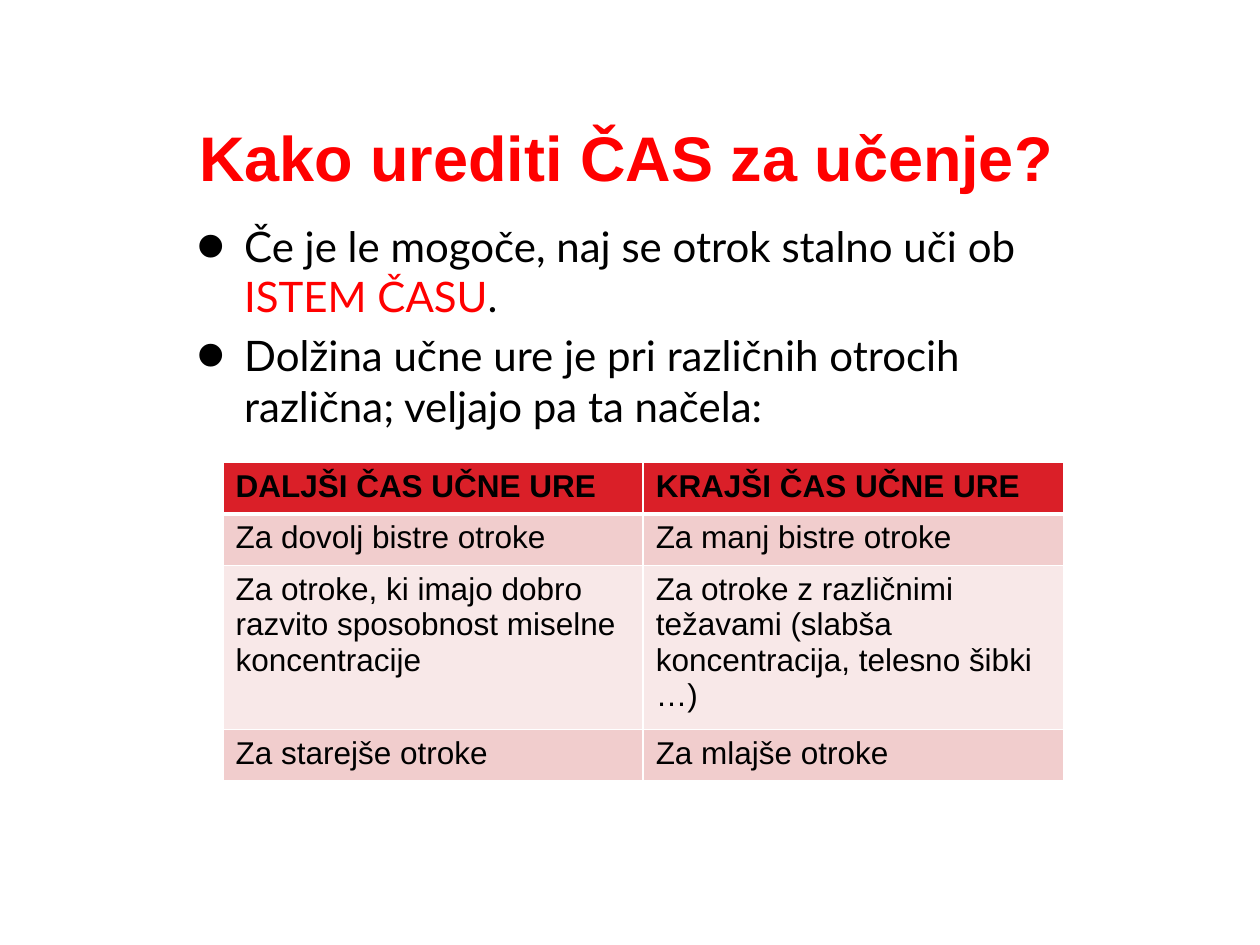
from typing import NamedTuple

from lxml import etree
from pptx import Presentation
from pptx.dml.color import RGBColor
from pptx.enum.text import MSO_ANCHOR, PP_ALIGN
from pptx.oxml.ns import qn
from pptx.util import Inches, Pt

CENTER = PP_ALIGN.CENTER
MIDDLE = MSO_ANCHOR.MIDDLE
TITLE_ONLY = 5

COLORS = {
    "accent": "FF0000",
    "text": "000000",
    "header": "DA1F28",
    "odd_row": "F1CDCD",
    "even_row": "F8E8E8",
    "border": "FFFFFF",
}


class Run(NamedTuple):
    text: str
    color: str = "text"


class Row(NamedTuple):
    longer: str
    shorter: str
    height: float = 0.41


BULLETS = [
    [Run("Če je le mogoče, naj se otrok stalno uči ob "),
     Run("ISTEM ČASU", "accent"), Run(".")],
    [Run("Dolžina učne ure je pri različnih otrocih različna; "
         "veljajo pa ta načela:")],
]

ROWS = [
    Row("DALJŠI ČAS UČNE URE", "KRAJŠI ČAS UČNE URE"),
    Row("Za dovolj bistre otroke", "Za manj bistre otroke"),
    Row("Za otroke, ki imajo dobro razvito sposobnost miselne koncentracije",
        "Za otroke z različnimi težavami (slabša koncentracija, "
        "telesno šibki …)", 1.22),
    Row("Za starejše otroke", "Za mlajše otroke"),
]


def rgb(name: str) -> RGBColor:
    return RGBColor.from_string(COLORS[name])


def add_run(p, run: Run, size: int, font: str, bold: bool = False) -> None:
    r = p.add_run()
    r.text = run.text
    r.font.size = Pt(size)
    r.font.name = font
    r.font.bold = bold
    r.font.color.rgb = rgb(run.color)


def set_bullet(p) -> None:
    """Give the paragraph a hanging bullet at twice the text size."""
    pPr = p._p.get_or_add_pPr()
    pPr.set("marL", str(Inches(0.38)))
    pPr.set("indent", str(-Inches(0.38)))
    etree.SubElement(pPr, qn("a:buSzPct"), val="200000")
    etree.SubElement(pPr, qn("a:buFont"), typeface="Arial")
    etree.SubElement(pPr, qn("a:buChar"), char="•")


def set_borders(cell, top: int, bottom: int) -> None:
    tcPr = cell._tc.get_or_add_tcPr()
    for side, width in (("L", 1), ("R", 1), ("T", top), ("B", bottom)):
        ln = etree.SubElement(tcPr, qn(f"a:ln{side}"), w=str(Pt(width)))
        fill = etree.SubElement(ln, qn("a:solidFill"))
        etree.SubElement(fill, qn("a:srgbClr"), val=COLORS["border"])


def add_title(slide, text: str) -> None:
    sp = slide.shapes.title
    sp.left, sp.top = Inches(0.43), Inches(0.99)
    sp.width, sp.height = Inches(9.08), Inches(0.5)
    tf = sp.text_frame
    tf.vertical_anchor = MIDDLE
    p = tf.paragraphs[0]
    p.alignment = CENTER
    add_run(p, Run(text, "accent"), 36, "Arial", bold=True)


def add_bullets(slide, bullets: list[list[Run]]) -> None:
    sp = slide.shapes.add_textbox(Inches(1.46), Inches(1.7),
                                  Inches(7.17), Inches(4.88))
    tf = sp.text_frame
    tf.word_wrap = True
    for i, runs in enumerate(bullets):
        p = tf.add_paragraph() if i else tf.paragraphs[0]
        set_bullet(p)
        if i:
            p.space_before = Pt(4.8)
        for run in runs:
            add_run(p, run, 24, "Lato")


def add_comparison(slide, rows: list[Row]) -> None:
    height = sum(row.height for row in rows)
    table = slide.shapes.add_table(len(rows), 2, Inches(1.77), Inches(3.67),
                                   Inches(6.67), Inches(height)).table
    for i, row in enumerate(rows):
        table.rows[i].height = Inches(row.height)
        fill = "header" if i == 0 else "odd_row" if i % 2 else "even_row"
        for j, text in enumerate((row.longer, row.shorter)):
            cell = table.cell(i, j)
            set_borders(cell, top=3 if i == 1 else 1, bottom=1 if i else 3)
            cell.fill.solid()
            cell.fill.fore_color.rgb = rgb(fill)
            add_run(cell.text_frame.paragraphs[0], Run(text), 18, "Arial",
                    bold=i == 0)


def main() -> None:
    prs = Presentation()
    prs.slide_width, prs.slide_height = Inches(10), Inches(7.5)
    slide = prs.slides.add_slide(prs.slide_layouts[TITLE_ONLY])
    add_title(slide, "Kako urediti ČAS za učenje?")
    add_bullets(slide, BULLETS)
    add_comparison(slide, ROWS)
    prs.save("out.pptx")


if __name__ == "__main__":
    main()
